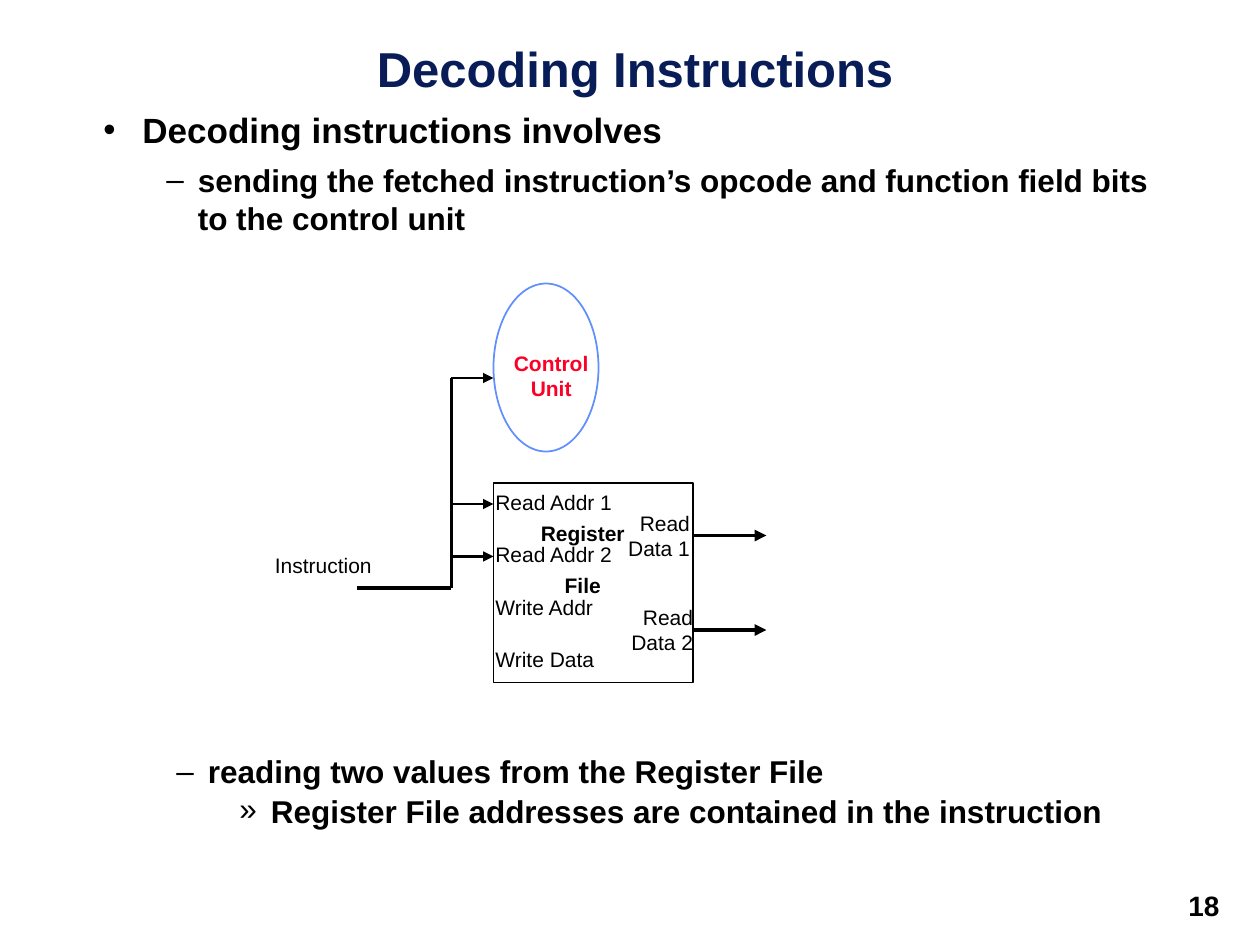
from lxml.etree import SubElement
from pptx import Presentation
from pptx.dml.color import RGBColor
from pptx.enum.shapes import MSO_CONNECTOR, MSO_SHAPE
from pptx.enum.text import MSO_ANCHOR, MSO_AUTO_SIZE, PP_ALIGN
from pptx.oxml.ns import qn
from pptx.util import Inches, Pt

COLORS = {"title": "081D58", "text": "000000", "oval": "618FFD", "control": "FC0128"}
CELL = Inches(1) / 12  # the diagram sits on a grid of 12 cells to the inch
LEFT, CENTER, RIGHT = PP_ALIGN.LEFT, PP_ALIGN.CENTER, PP_ALIGN.RIGHT
# bullet, size, text edge and hanging indent for each list level
LEVELS = [("•", 20, 0.31, 0.31), ("–", 18, 0.75, 0.25), ("»", 18, 1.25, 0.25)]


def cells(*values):
    return [round(v * CELL) for v in values]


def set_frame(tf, dx, dy, wrap=True):
    frame = {"margin_left": Inches(dx), "margin_right": Inches(dx),
             "margin_top": Inches(dy), "margin_bottom": Inches(dy),
             "auto_size": MSO_AUTO_SIZE.NONE, "word_wrap": wrap,
             "vertical_anchor": MSO_ANCHOR.TOP}
    for name, value in frame.items():
        setattr(tf, name, value)


def add_text(p, text, size, color="text", bold=False):
    r = p.add_run()
    r.text = text
    for name, value in {"name": "Arial", "size": Pt(size), "bold": bold}.items():
        setattr(r.font, name, value)
    r.font.color.rgb = RGBColor.from_string(COLORS[color])


def place(sp, box):
    sp.left, sp.top, sp.width, sp.height = [Inches(v) for v in box]
    set_frame(sp.text_frame, 0.07, 0.03)


def fill_title(sp, box, text):
    place(sp, box)
    p = sp.text_frame.paragraphs[0]
    p.alignment, p.line_spacing = CENTER, 0.9
    add_text(p, text, 28, "title", True)


def fill_list(sp, box, items):
    """Items are (level, line spacing, text)."""
    place(sp, box)
    tf = sp.text_frame
    for i, (level, spacing, text) in enumerate(items):
        p = tf.add_paragraph() if i else tf.paragraphs[0]
        bullet, size, edge, hang = LEVELS[level]
        p.level, p.line_spacing, p.alignment = level, spacing, LEFT
        p.space_before = Pt(6 if i else 3)
        pPr = p._p.get_or_add_pPr()
        pPr.set("marL", str(Inches(edge)))
        pPr.set("indent", str(-Inches(hang)))
        SubElement(pPr, qn("a:buFont"), typeface="Arial")
        SubElement(pPr, qn("a:buChar"), char=bullet)
        add_text(p, text, size, bold=True)


def add_label(shapes, box, lines, align=LEFT, gap=0, margins=(0.1, 0.05), size=12, **font):
    sp = shapes.add_textbox(*cells(*box))
    tf = sp.text_frame
    set_frame(tf, *margins, wrap=False)
    for i, text in enumerate(lines):
        p = tf.add_paragraph() if i else tf.paragraphs[0]
        p.alignment = align
        p.space_before = Pt(gap if i else 0)
        add_text(p, text, size, **font)


def add_outline(shapes, kind, box, color):
    sp = shapes.add_shape(kind, *cells(*box))
    sp.shadow.inherit = False
    sp.fill.background()
    sp.line.color.rgb = RGBColor.from_string(COLORS[color])
    sp.line.width = Pt(1)


def add_wire(shapes, start, end, width, arrow=True):
    wire = shapes.add_connector(MSO_CONNECTOR.STRAIGHT, *cells(*start, *end))
    wire.line.color.rgb = RGBColor.from_string(COLORS["text"])
    wire.line.width = Pt(width)
    if arrow:
        SubElement(wire.line._get_or_add_ln(), qn("a:tailEnd"), type="triangle")
    SubElement(wire._element.spPr, qn("a:effectLst"))


def draw_instruction_bus(shapes, col, row):
    """Instruction input and its riser; col, row is the riser's top."""
    add_wire(shapes, (col - 9, row + 20), (col, row + 20), 2.25, arrow=False)
    add_wire(shapes, (col, row), (col, row + 20), 2.25, arrow=False)
    add_label(shapes, (col - 18, row + 16, 11.6, 3.6), ["Instruction"])


def draw_control_unit(shapes, col, row):
    add_outline(shapes, MSO_SHAPE.OVAL, (col, row, 10, 16), "oval")
    add_label(shapes, (col + 2, row + 6, 7, 6), ["Control", "Unit"], CENTER,
              margins=(0.02, 0.03), color="control", bold=True)
    add_wire(shapes, (col - 4, row + 9), (col, row + 9), 1)


def draw_register_file(shapes, col, row, side=19):
    add_outline(shapes, MSO_SHAPE.RECTANGLE, (col, row, side, side), "text")
    for y in (2, 7):
        add_wire(shapes, (col - 4, row + y), (col, row + y), 1.5)
    for i, text in enumerate(["Read Addr 1", "Read Addr 2", "Write Addr", "Write Data"]):
        add_label(shapes, (col - 1, row + 5 * i, 13.5 if i < 2 else 11.9, 3.6), [text])
    add_label(shapes, (col + 3.3, row + 3, 10.4, 8.4), ["Register", "File"], CENTER,
              gap=15, bold=True)
    for i, x in enumerate((11, 11.3)):
        y = row + 5 + 9 * i
        add_wire(shapes, (col + side, y), (col + side + 7, y), 2.25)
        add_label(shapes, (col + x, y - 3, 8.9, 6), ["Read", f"Data {i + 1}"], RIGHT)


def main():
    prs = Presentation()
    prs.slide_width, prs.slide_height = Inches(10), Inches(7.5)
    s = prs.slides.add_slide(prs.slide_layouts[3])
    title, steps, more_steps = s.placeholders
    fill_title(title, (0.58, 0.33, 8.92, 0.46), "Decoding Instructions")
    fill_list(steps, (0.75, 0.83, 8.58, 1.26), [
        (0, 1, "Decoding instructions involves"),
        (1, 1, "sending the fetched instruction’s opcode and function field bits "
               "to the control unit")])
    fill_list(more_steps, (0.83, 6, 8.58, 0.67), [
        (1, 0.8, "reading two values from the Register File"),
        (2, 0.75, "Register File addresses are contained in the instruction")])
    draw_instruction_bus(s.shapes, 43, 36)
    draw_control_unit(s.shapes, 47, 27)
    draw_register_file(s.shapes.add_group_shape().shapes, 47, 46)
    add_label(s.shapes, (112, 84, 5.6, 4.3), ["18"], size=16, bold=True)
    prs.save("out.pptx")


if __name__ == "__main__":
    main()
